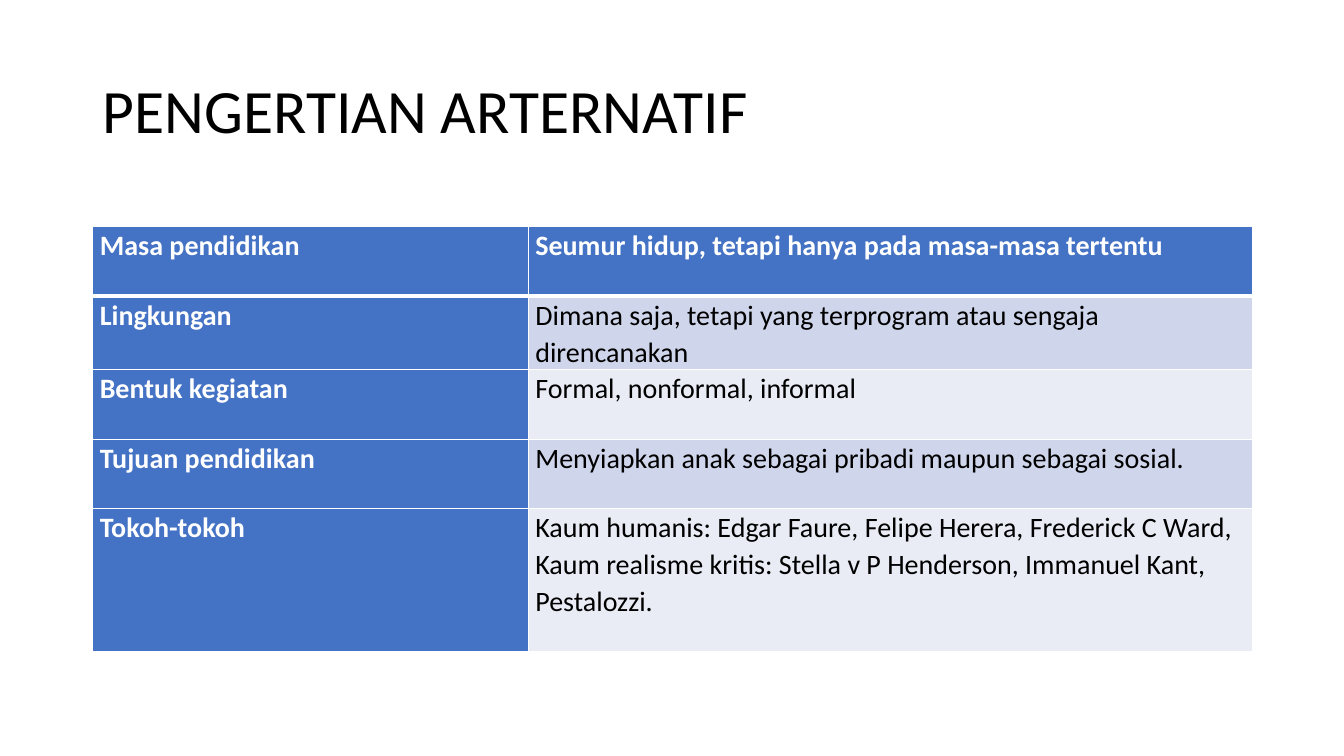
from dataclasses import dataclass

from lxml import etree
from pptx import Presentation
from pptx.dml.color import RGBColor
from pptx.enum.text import MSO_ANCHOR, PP_ALIGN
from pptx.oxml.ns import qn
from pptx.util import Inches, Pt

LEFT = PP_ALIGN.LEFT
MIDDLE = MSO_ANCHOR.MIDDLE
TOP = MSO_ANCHOR.TOP


@dataclass(frozen=True)
class Theme:
    font: str = "Calibri"
    title_size: int = 44
    table_size: int = 20
    black: str = "000000"
    white: str = "FFFFFF"
    blue: str = "4472C4"
    bands: tuple = ("E9EBF5", "CFD5EA")


theme = Theme()


def style_paragraph(paragraph, size, color, bold, line_spacing):
    paragraph.alignment = LEFT
    paragraph.line_spacing = line_spacing
    paragraph.font.name = theme.font
    paragraph.font.size = Pt(size)
    paragraph.font.bold = bold
    paragraph.font.color.rgb = RGBColor.from_string(color)


def add_border(cell, side, width):
    properties = cell._tc.get_or_add_tcPr()
    line = etree.SubElement(properties, qn(f"a:ln{side}"), w=str(Pt(width)))
    fill = etree.SubElement(line, qn("a:solidFill"))
    etree.SubElement(fill, qn("a:srgbClr"), val=theme.white)


presentation = Presentation()
presentation.slide_width = Inches(13.33)
presentation.slide_height = Inches(7.5)
slide = presentation.slides.add_slide(presentation.slide_layouts[5])

title = slide.shapes.title
title.left, title.top = Inches(0.92), Inches(0.4)
title.width, title.height = Inches(11.5), Inches(1.45)
title.text_frame.text = "PENGERTIAN ARTERNATIF"
title.text_frame.vertical_anchor = MIDDLE
style_paragraph(title.text_frame.paragraphs[0], theme.title_size, theme.black, False, 0.9)

rows = [
    ("Masa pendidikan", "Seumur hidup, tetapi hanya pada masa-masa tertentu"),
    ("Lingkungan", "Dimana saja, tetapi yang terprogram atau sengaja direncanakan"),
    ("Bentuk kegiatan", "Formal, nonformal, informal"),
    ("Tujuan pendidikan", "Menyiapkan anak sebagai pribadi maupun sebagai sosial."),
    (
        "Tokoh-tokoh",
        "Kaum humanis: Edgar Faure, Felipe Herera, Frederick C Ward,\n"
        "Kaum realisme kritis: Stella v P Henderson, Immanuel Kant, Pestalozzi.",
    ),
]
column_widths = (4.32, 7.18)
row_heights = [0.69] * 4 + [1.42]

table = slide.shapes.add_table(
    len(rows), len(column_widths), Inches(0.92), Inches(2.25), Inches(11.5), Inches(4.19)
).table
table.first_col = True
for column, width in zip(table.columns, column_widths):
    column.width = Inches(width)

for row_index, texts in enumerate(rows):
    table.rows[row_index].height = Inches(row_heights[row_index])
    for column_index, text in enumerate(texts):
        cell = table.cell(row_index, column_index)
        is_header = row_index == 0 or column_index == 0
        cell.text = text
        cell.vertical_anchor = TOP
        cell.margin_left = cell.margin_right = Inches(0.07)
        cell.margin_top = cell.margin_bottom = 0
        add_border(cell, "L", 1)
        add_border(cell, "R", 1)
        add_border(cell, "T", 3 if row_index == 1 else 1)
        add_border(cell, "B", 3 if row_index == 0 else 1)
        cell.fill.solid()
        cell.fill.fore_color.rgb = RGBColor.from_string(
            theme.blue if is_header else theme.bands[row_index % 2]
        )
        for paragraph in cell.text_frame.paragraphs:
            style_paragraph(
                paragraph,
                theme.table_size,
                theme.white if is_header else theme.black,
                is_header,
                1.07,
            )

presentation.save("out.pptx")
